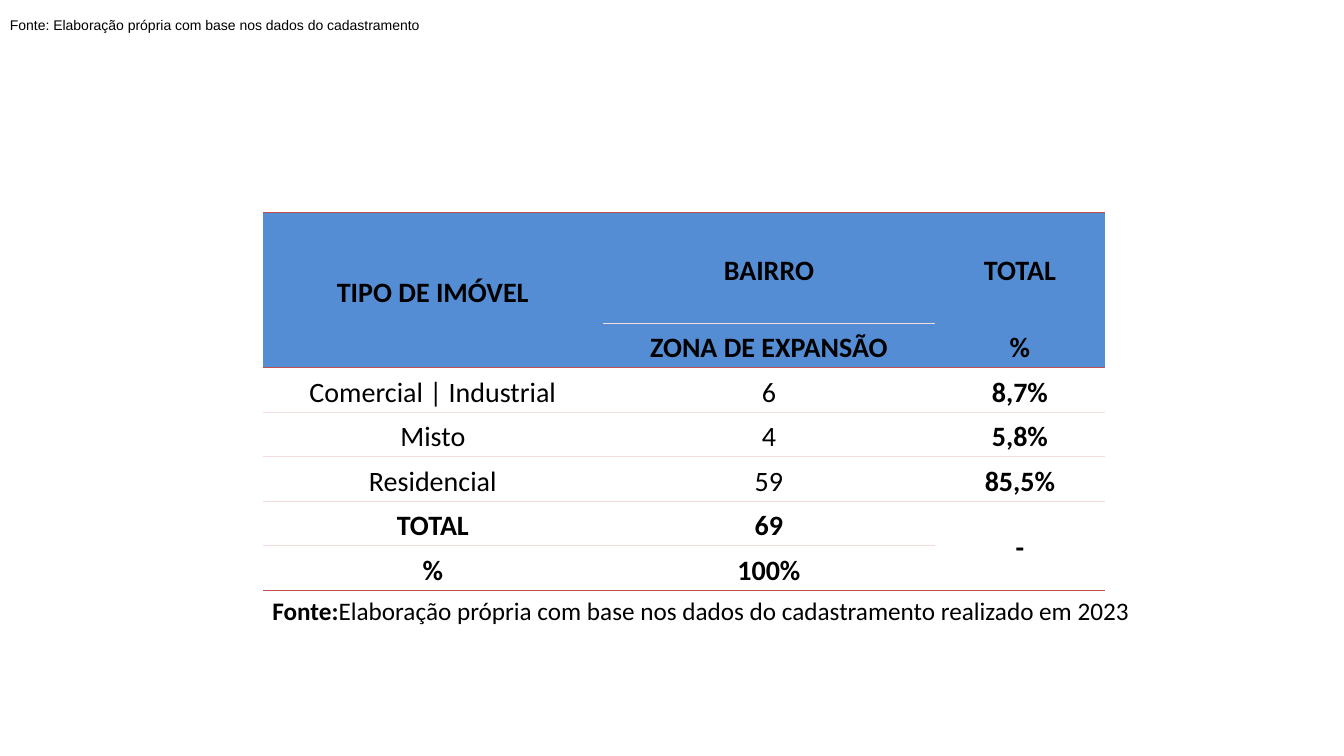
from dataclasses import dataclass

from lxml import etree
from pptx import Presentation
from pptx.dml.color import RGBColor
from pptx.enum.text import MSO_ANCHOR, PP_ALIGN
from pptx.oxml.ns import qn
from pptx.util import Pt

MIDDLE = MSO_ANCHOR.MIDDLE
TOP = MSO_ANCHOR.TOP
CENTER = PP_ALIGN.CENTER
BLANK_LAYOUT = 6


@dataclass(frozen=True)
class Theme:
    """Colours, fonts and type sizes of the slide."""
    text: str = "000000"
    header: str = "548DD4"
    paper: str = "FFFFFF"
    strong_rule: str = "C0504D"
    light_rule: str = "F2DDDC"
    table_font: str = "Calibri"
    note_font: str = "Arial"
    table_size: int = 20
    source_size: int = 18
    note_size: int = 10


THEME = Theme()
COLUMN_WIDTHS = (243.3, 236.9, 121.7)
ROW_HEIGHTS = (79.2,) + (31.8,) * 6
HEADER_ROWS = 2
TOTAL_ROW = 5
SHARE_COLUMN = 2
ROWS = (
    ("TIPO DE IMÓVEL", "BAIRRO", "TOTAL"),
    ("", "ZONA DE EXPANSÃO", "%"),
    ("Comercial | Industrial", "6", "8,7%"),
    ("Misto", "4", "5,8%"),
    ("Residencial", "59", "85,5%"),
    ("TOTAL", "69", "-"),
    ("%", "100%", ""),
)


def format_run(run, font_name, size, bold=False):
    """Give a run its font, size, weight and colour."""
    run.font.name = font_name
    run.font.size = Pt(size)
    run.font.bold = bold
    run.font.color.rgb = RGBColor.from_string(THEME.text)


def rule_colour(edge, column):
    """Return the colour of the rule above row number edge, or None."""
    if edge in (0, HEADER_ROWS, len(ROWS)):
        return THEME.strong_rule
    if (edge, column) in ((1, 0), (1, SHARE_COLUMN), (TOTAL_ROW + 1, SHARE_COLUMN)):
        return None
    return THEME.light_rule


def set_borders(cell, top, bottom):
    """Draw the horizontal rules of a cell and hide its vertical ones."""
    properties = cell._tc.get_or_add_tcPr()
    sides = (("a:lnL", None), ("a:lnR", None), ("a:lnT", top), ("a:lnB", bottom))
    for position, (tag, colour) in enumerate(sides):
        line = etree.Element(qn(tag), w=str(Pt(1)))
        if colour:
            fill = etree.SubElement(line, qn("a:solidFill"))
            etree.SubElement(fill, qn("a:srgbClr"), val=colour)
        else:
            etree.SubElement(line, qn("a:noFill"))
        properties.insert(position, line)


def fill_cell(cell, row, column):
    """Write and format one table cell."""
    cell.vertical_anchor = MIDDLE
    cell.margin_left = cell.margin_right = Pt(3.6)
    cell.margin_top = cell.margin_bottom = 0
    if row < HEADER_ROWS:
        cell.fill.solid()
        cell.fill.fore_color.rgb = RGBColor.from_string(THEME.header)
    elif row >= TOTAL_ROW and column == SHARE_COLUMN:
        cell.fill.solid()
        cell.fill.fore_color.rgb = RGBColor.from_string(THEME.paper)
    else:
        cell.fill.background()
    bottom_edge = row + cell.span_height
    set_borders(cell, rule_colour(row, column), rule_colour(bottom_edge, column))
    if cell.is_spanned:
        return
    cell.text_frame.text = ROWS[row][column]
    paragraph = cell.text_frame.paragraphs[0]
    paragraph.alignment = CENTER
    paragraph.line_spacing = 1.15
    is_data = HEADER_ROWS <= row < TOTAL_ROW
    bold = not is_data or column == SHARE_COLUMN
    format_run(paragraph.runs[0], THEME.table_font, THEME.table_size, bold)


def add_property_table(slide, left, top):
    """Add the table of property types at the given corner."""
    frame = slide.shapes.add_table(
        len(ROWS), len(COLUMN_WIDTHS), Pt(left), Pt(top),
        Pt(sum(COLUMN_WIDTHS)), Pt(sum(ROW_HEIGHTS)))
    table = frame.table
    table.first_row = table.horz_banding = False
    for column, width in zip(table.columns, COLUMN_WIDTHS):
        column.width = Pt(width)
    for row, height in zip(table.rows, ROW_HEIGHTS):
        row.height = Pt(height)
    table.cell(0, 0).merge(table.cell(1, 0))
    table.cell(TOTAL_ROW, SHARE_COLUMN).merge(table.cell(TOTAL_ROW + 1, SHARE_COLUMN))
    for row in range(len(ROWS)):
        for column in range(len(COLUMN_WIDTHS)):
            fill_cell(table.cell(row, column), row, column)


def add_note(slide, left, top, width, height, anchor, font_name, size, parts):
    """Add a line of text made of (text, bold) parts in the given box."""
    box = slide.shapes.add_textbox(Pt(left), Pt(top), Pt(width), Pt(height))
    box.text_frame.word_wrap = True
    box.text_frame.vertical_anchor = anchor
    paragraph = box.text_frame.paragraphs[0]
    for text, bold in parts:
        run = paragraph.add_run()
        run.text = text
        format_run(run, font_name, size, bold)


def main():
    """Build the slide and save the presentation."""
    presentation = Presentation()
    presentation.slide_width = Pt(960)
    presentation.slide_height = Pt(540)
    slide = presentation.slides.add_slide(presentation.slide_layouts[BLANK_LAYOUT])
    left, top = 187.5, 151.8
    add_property_table(slide, left, top)
    add_note(slide, 0, 0, 960, 36, MIDDLE, THEME.note_font, THEME.note_size,
             (("Fonte: Elaboração própria com base nos dados do cadastramento", False),))
    add_note(slide, left, top + sum(ROW_HEIGHTS), 675.4, 29, TOP,
             THEME.table_font, THEME.source_size,
             (("Fonte:", True),
              ("Elaboração própria com base nos dados do cadastramento realizado em 2023",
               False)))
    presentation.save("out.pptx")


if __name__ == "__main__":
    main()
